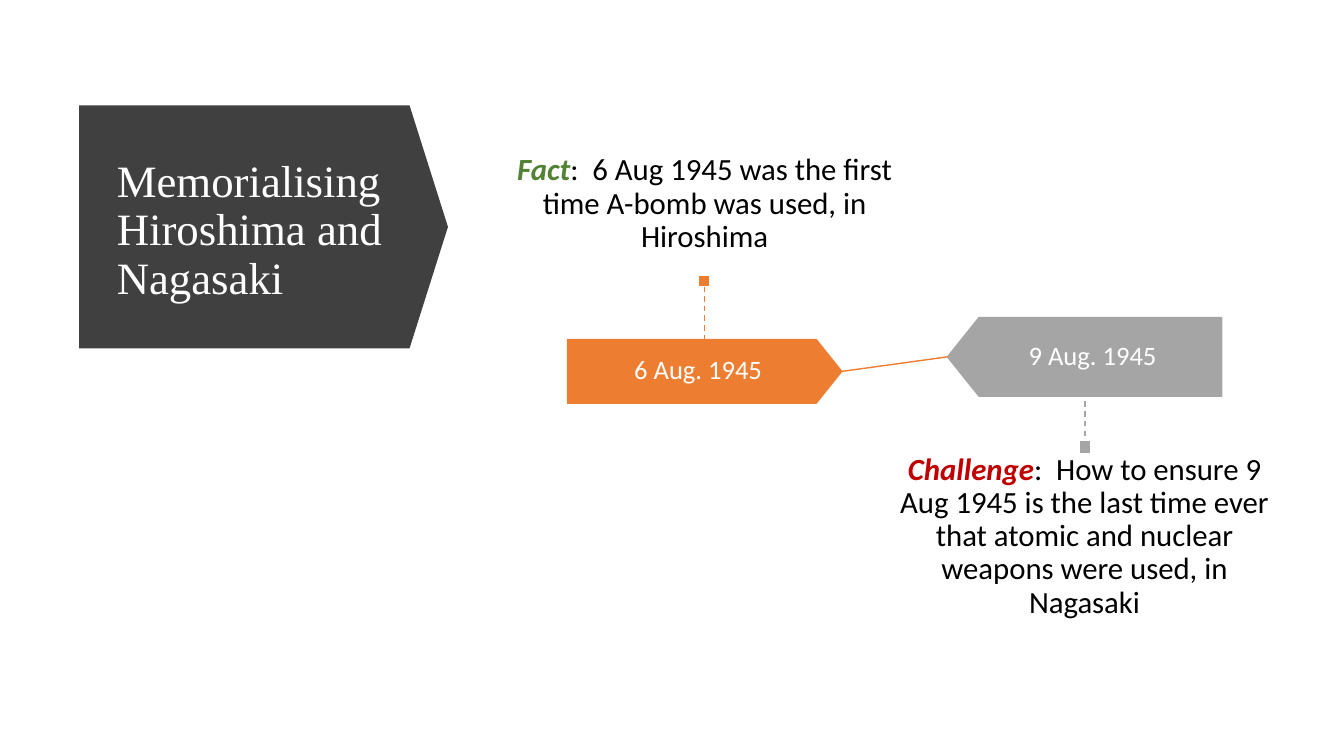
from lxml.etree import SubElement
from pptx import Presentation
from pptx.dml.color import RGBColor
from pptx.enum.dml import MSO_LINE
from pptx.enum.shapes import MSO_CONNECTOR, MSO_SHAPE
from pptx.enum.text import MSO_ANCHOR, PP_ALIGN
from pptx.oxml.ns import qn
from pptx.util import Pt

COLORS = {
    "banner": "404040", "orange": "ED7D31", "grey": "A5A5A5", "white": "FFFFFF",
    "black": "000000", "green": "548235", "red": "C00000",
}
TITLE = "Memorialising Hiroshima and Nagasaki"
BANNER_BOX = (56.5, 75.3, 263.5, 173.5)
TITLE_BOX = (76.3, 95, 210.2, 140.4)

# Boxes are left, top, width, height; a stem runs from y to y at one x
EVENTS = [
    dict(date="6 Aug. 1945", color="orange", rotation=0,
         arrow=(405.4, 242.6, 195.8, 45.4), date_box=(405.4, 242.6, 186.5, 45.4),
         lead="Fact", lead_color="green",
         note=":  6 Aug 1945 was the first time A-bomb was used, in Hiroshima",
         note_box=(367.2, 74.9, 272.2, 121.7), anchor=MSO_ANCHOR.BOTTOM,
         stem=(503.3, 204.5, 242.6), marker=(499, 196.6, 7.9, 7.9)),
    dict(date="9 Aug. 1945", color="grey", rotation=180,
         arrow=(676.8, 226.8, 195.8, 56.2), date_box=(688.3, 226.8, 184.3, 56.2),
         lead="Challenge", lead_color="red",
         note=":  How to ensure 9 Aug 1945 is the last time ever that atomic "
              "and nuclear weapons were used, in Nagasaki",
         note_box=(638.6, 308.9, 272.2, 150.5), anchor=MSO_ANCHOR.TOP,
         stem=(774.9, 272.9, 319.7), marker=(771, 314.6, 7.9, 9.4)),
]


def rgb(name):
    return RGBColor.from_string(COLORS[name])


def add_block(slide, kind, box, fill, line=None):
    sp = slide.shapes.add_shape(kind, *map(Pt, box))
    sp.shadow.inherit = False
    sp.fill.solid()
    sp.fill.fore_color.rgb = rgb(fill)
    if line:
        sp.line.color.rgb = rgb(line)
        sp.line.width = Pt(1)
    else:
        sp.line.fill.background()
    return sp


def add_text(slide, box, runs, anchor, align, insets):
    """Add one paragraph; runs are (text, font values) and insets are (side, end)."""
    tf = slide.shapes.add_textbox(*map(Pt, box)).text_frame
    side, end = map(Pt, insets)
    frame = dict(word_wrap=True, vertical_anchor=anchor, margin_left=side,
                 margin_right=side, margin_top=end, margin_bottom=end)
    for name, value in frame.items():
        setattr(tf, name, value)
    p = tf.paragraphs[0]
    p.alignment = align
    p.line_spacing = 0.9
    for text, (size, font, color, strong) in runs:
        r = p.add_run()
        r.text = text
        values = dict(size=Pt(size), name=font, bold=strong, italic=strong)
        for name, value in values.items():
            setattr(r.font, name, value)
        r.font.color.rgb = rgb(color)


def add_line(slide, start, end, color, dash=None):
    cx = slide.shapes.add_connector(MSO_CONNECTOR.STRAIGHT, *map(Pt, start + end))
    cx.line.color.rgb = rgb(color)
    cx.line.width = Pt(1)
    if dash:
        cx.line.dash_style = dash
    SubElement(cx._element.spPr, qn("a:effectLst"))


def add_event(slide, event):
    color = event["color"]
    arrow = add_block(slide, MSO_SHAPE.PENTAGON, event["arrow"], color, color)
    arrow.adjustments[0] = 0.4
    arrow.rotation = event["rotation"]
    add_text(slide, event["date_box"],
             [(event["date"], (19, "Calibri", "white", False))],
             MSO_ANCHOR.MIDDLE, PP_ALIGN.CENTER, (11.5, 11.5))
    add_text(slide, event["note_box"],
             [(event["lead"], (22, "Calibri", event["lead_color"], True)),
              (event["note"], (22, "Calibri", "black", False))],
             event["anchor"], PP_ALIGN.CENTER, (0, 15.1))
    x, top, bottom = event["stem"]
    add_line(slide, (x, top), (x, bottom), color, MSO_LINE.DASH)
    add_block(slide, MSO_SHAPE.RECTANGLE, event["marker"], color, "white")


def main():
    prs = Presentation()
    prs.slide_width, prs.slide_height = Pt(960), Pt(540)
    slide = prs.slides.add_slide(prs.slide_layouts[6])

    banner = add_block(slide, MSO_SHAPE.PENTAGON, BANNER_BOX, "banner")
    banner.adjustments[0] = 0.158
    add_text(slide, TITLE_BOX, [(TITLE, (32, "Times New Roman", "white", False))],
             MSO_ANCHOR.MIDDLE, PP_ALIGN.LEFT, (7.2, 3.6))

    for event in EVENTS:
        add_event(slide, event)

    # Join the tips of the two arrows
    (x1, y1, w1, h1), (x2, y2, _, h2) = (event["arrow"] for event in EVENTS)
    add_line(slide, (x1 + w1, y1 + h1 / 2), (x2, y2 + h2 / 2), "orange")
    prs.save("out.pptx")


if __name__ == "__main__":
    main()
